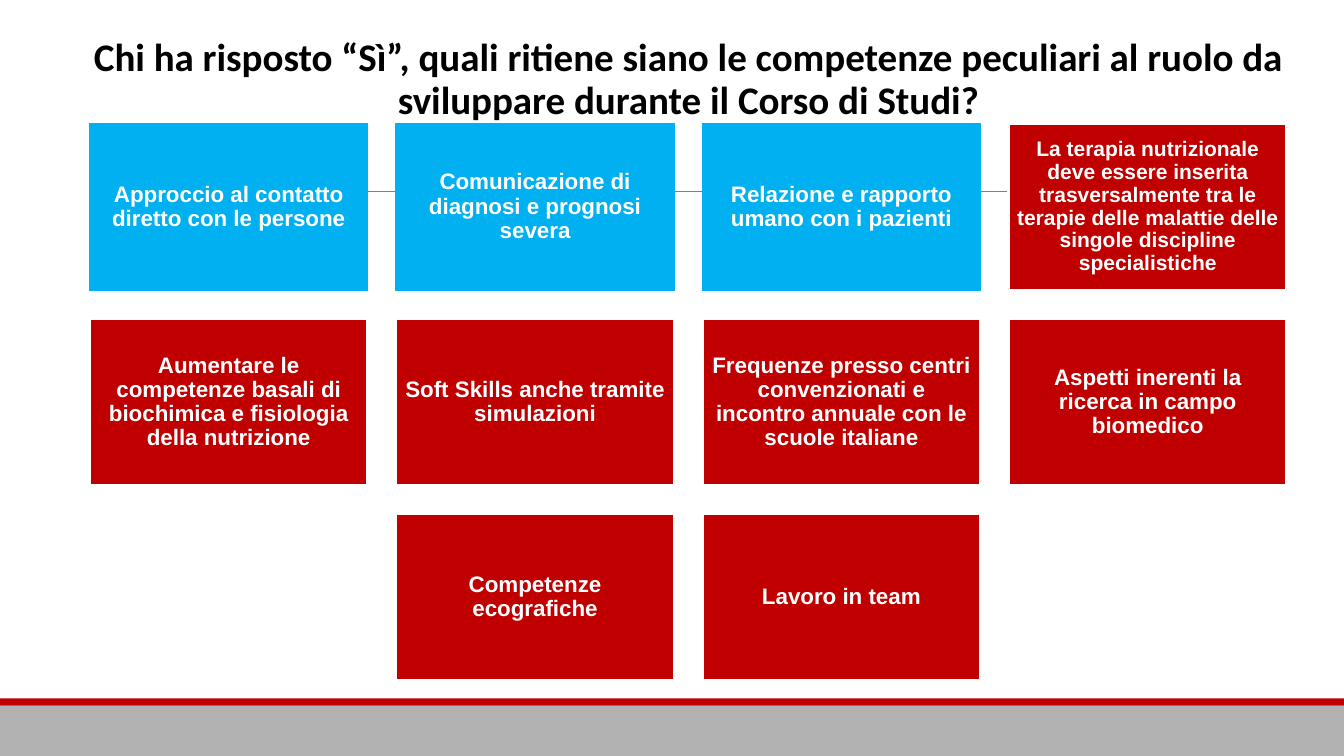
from lxml.etree import SubElement
from pptx import Presentation
from pptx.dml.color import RGBColor
from pptx.enum.shapes import MSO_CONNECTOR, MSO_SHAPE
from pptx.enum.text import MSO_ANCHOR, MSO_AUTO_SIZE, PP_ALIGN
from pptx.oxml.ns import qn
from pptx.util import Cm, Pt

COLORS = {"red": "C00000", "blue": "00B0F0", "gray": "B2B2B2",
          "line": "808080", "white": "FFFFFF", "black": "000000"}
WIDTH, HEIGHT = 33.87, 19.05

# Each skill: text, fill colour, font size
SKILL_ROWS = [
    [("Approccio al contatto diretto con le persone", "blue", 16),
     ("Comunicazione di diagnosi e prognosi severa", "blue", 16),
     ("Relazione e rapporto umano con i pazienti", "blue", 16),
     ("La terapia nutrizionale deve essere inserita trasversalmente tra le "
      "terapie delle malattie delle singole discipline specialistiche", "red", 15)],
    [("Aumentare le competenze basali di biochimica e fisiologia della nutrizione", "red", 16),
     ("Soft Skills anche tramite simulazioni", "red", 16),
     ("Frequenze presso centri convenzionati e incontro annuale con le scuole italiane", "red", 16),
     ("Aspetti inerenti la ricerca in campo biomedico", "red", 16)],
    [("Competenze ecografiche", "red", 16),
     ("Lavoro in team", "red", 16)],
]


def rgb(name):
    return RGBColor.from_string(COLORS[name])


def add_rect(s, x, y, w, h, fill):
    sp = s.shapes.add_shape(MSO_SHAPE.RECTANGLE, Cm(x), Cm(y), Cm(w), Cm(h))
    sp.shadow.inherit = False
    sp.fill.solid()
    sp.fill.fore_color.rgb = rgb(fill)
    sp.line.fill.background()
    return sp


def write_text(sp, text, font, size, color, inset):
    """Write one bold, centred paragraph in a shape with equal insets."""
    tf = sp.text_frame
    tf.word_wrap = True
    tf.auto_size = MSO_AUTO_SIZE.NONE
    tf.vertical_anchor = MSO_ANCHOR.MIDDLE
    tf.margin_left = tf.margin_right = tf.margin_top = tf.margin_bottom = Cm(inset)
    p = tf.paragraphs[0]
    p.alignment = PP_ALIGN.CENTER
    p.line_spacing = 0.9
    r = p.add_run()
    r.text = text
    r.font.name = font
    r.font.size = Pt(size)
    r.font.bold = True
    r.font.color.rgb = rgb(color)


def add_footer(s, x, y, w, h, rule=0.18):
    add_rect(s, x, y + rule, w, h - rule, "gray")
    add_rect(s, x, y, w, rule, "red")


def add_header_line(s, x, y, w):
    line = s.shapes.add_connector(MSO_CONNECTOR.STRAIGHT, Cm(x), Cm(y), Cm(x + w), Cm(y))
    line.line.color.rgb = rgb("line")
    line.line.width = Pt(0.75)
    SubElement(line._element.spPr, qn("a:effectLst"))


def add_title(s, x, y, w, h):
    title = s.shapes.title
    title.left, title.top, title.width, title.height = Cm(x), Cm(y), Cm(w), Cm(h)
    write_text(title, "Chi ha risposto “Sì”, quali ritiene siano le competenze peculiari "
               "al ruolo da sviluppare durante il Corso di Studi?", "Calibri", 27.9, "black", 0)
    title.text_frame.margin_bottom = Cm(1.06)


def add_skill_grid(s, x, y, w, h, gap=0.71):
    """Place the skill boxes in rows, centring the rows that are not full."""
    columns = max(len(row) for row in SKILL_ROWS)
    box_w = (w - gap * (columns - 1)) / columns
    box_h = (h - gap * (len(SKILL_ROWS) - 1)) / len(SKILL_ROWS)
    for i, row in enumerate(SKILL_ROWS):
        row_x = x + (columns - len(row)) / 2 * (box_w + gap)
        for j, (text, fill, size) in enumerate(row):
            sp = add_rect(s, row_x + j * (box_w + gap), y + i * (box_h + gap),
                          box_w, box_h, fill)
            sp.line.color.rgb = rgb("blue" if fill == "blue" else "white")
            sp.line.width = Pt(0.75 if fill == "blue" else 2)
            write_text(sp, text, "Arial", size, "white", 0.19)


def main():
    prs = Presentation()
    prs.slide_width, prs.slide_height = Cm(WIDTH), Cm(HEIGHT)
    s = prs.slides.add_slide(prs.slide_layouts[5])
    add_footer(s, 0, 17.6, WIDTH, HEIGHT - 17.6)
    add_header_line(s, 3.33, 4.83, 27.68)
    add_title(s, 1.55, 0.97, 31.6, 3.17)
    add_skill_grid(s, 2.26, 3.11, 30.17, 14.04)
    prs.save("out.pptx")


if __name__ == "__main__":
    main()
